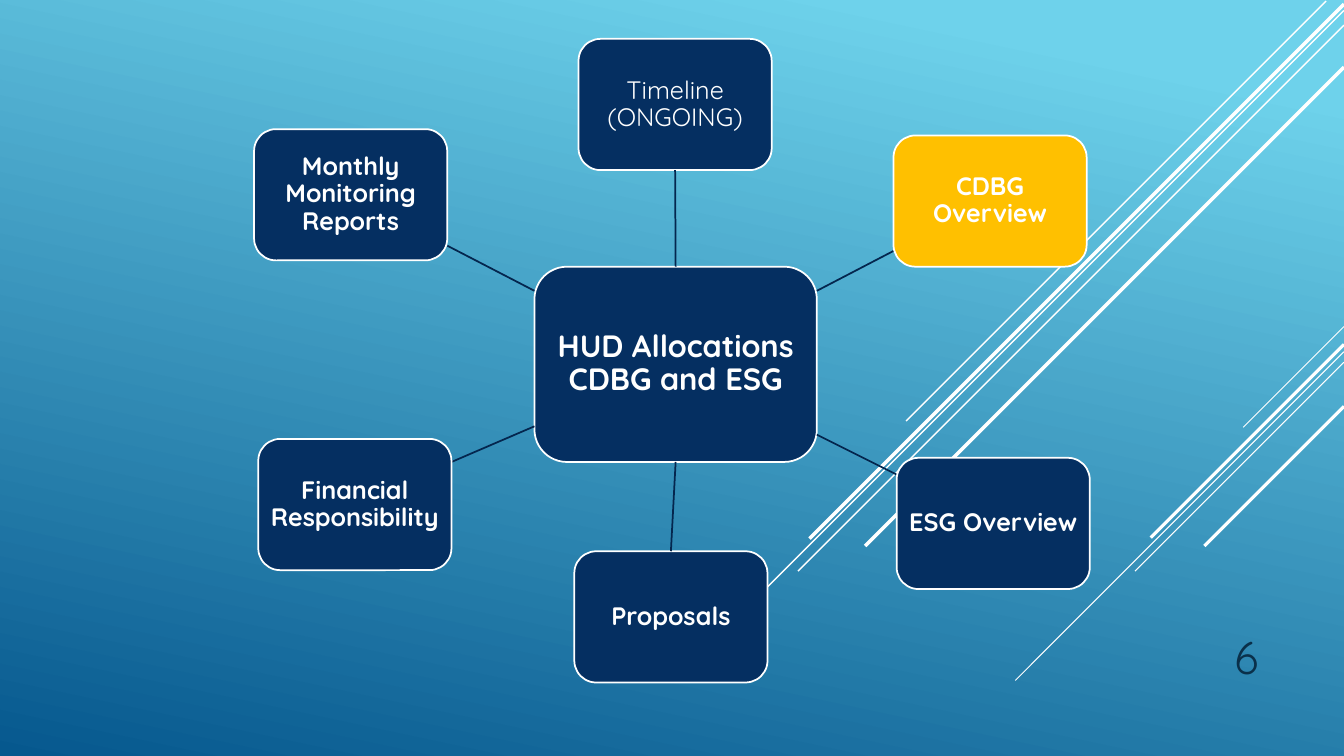
import pptx
import pptx.dml.color
import pptx.enum.shapes
import pptx.enum.text
import pptx.oxml.ns
import pptx.util
from lxml import etree

RGB = pptx.dml.color.RGBColor
ALIGN = pptx.enum.text.PP_ALIGN
ANCHOR = pptx.enum.text.MSO_ANCHOR

WHITE = RGB(0xFF, 0xFF, 0xFF)
NAVY = RGB(0x05, 0x2F, 0x61)
SPOKE_NAVY = RGB(0x04, 0x26, 0x4E)
NUMBER_NAVY = RGB(0x0A, 0x30, 0x4A)
GOLD = RGB(0xFF, 0xC0, 0x00)
SKY = RGB(0x6E, 0xD2, 0xEB)
DEEP_BLUE = RGB(0x06, 0x58, 0x8E)

EMU_PER_PX = 9525
TOP, LEFT, BOTTOM, RIGHT = range(4)

# Start x, start y, run, width in points; every streak falls at 45 degrees.
STREAKS = [
    (1280, 311, 96, 0.75),
    (1280, 335, 313, 0.75),
    (1280, 345, 199, 0.75),
    (1280, 328, 184, 2.25),
    (1280, 387, 133, 2.25),
    (1263, 1, 400, 1),
    (1280, 10, 638, 1),
    (1280, 24, 520, 1),
    (1280, 4, 509, 2.5),
    (1280, 64, 456, 2.5),
]

HUB_BOX = (509, 254, 269, 186)
TOPIC_SIZE = (184, 125)
# Left, top, label, fill, bold
SIDE_TOPICS = [
    (854, 436, "ESG Overview", NAVY),
    (242, 123, "Monthly Monitoring Reports", NAVY),
    (246, 418, "Financial Responsibility", NAVY),
    (851, 129, "CDBG Overview", GOLD),
]


def px(length):
    return pptx.util.Emu(round(length * EMU_PER_PX))


def centre(box):
    left, top, width, height = box
    return left + width / 2, top + height / 2


def spoke_ends(hub, topic):
    """Clip the centre-to-centre line at the facing vertical sides."""
    (hub_x, hub_y), (topic_x, topic_y) = centre(hub), centre(topic)
    slope = (topic_y - hub_y) / (topic_x - hub_x)
    if topic_x > hub_x:
        start_x, end_x = hub[0] + hub[2], topic[0]
    else:
        start_x, end_x = hub[0], topic[0] + topic[2]
    return [(x, round(hub_y + slope * (x - hub_x))) for x in (start_x, end_x)]


def write_text(frame, text, *, size, color=WHITE, bold=False, align=ALIGN.CENTER,
               anchor=ANCHOR.MIDDLE, inset=None, spacing=None):
    frame.word_wrap = True
    frame.vertical_anchor = anchor
    if inset is not None:
        frame.margin_left = frame.margin_right = px(inset)
        frame.margin_top = frame.margin_bottom = px(inset)
    paragraph = frame.paragraphs[0]
    paragraph.alignment = align
    paragraph.line_spacing = spacing
    run = paragraph.add_run()
    run.text = text
    run.font.name = "Quicksand"
    run.font.size = pptx.util.Pt(size)
    run.font.bold = bold
    run.font.color.rgb = color


class HubSlide:
    def __init__(self, presentation):
        self.slide = presentation.slides.add_slide(presentation.slide_layouts[6])
        self.shapes = self.slide.shapes

    def background(self):
        fill = self.slide.background.fill
        fill.gradient()
        fill.gradient_angle = 258
        for stop, position, color in zip(fill.gradient_stops, (0.1, 1), (SKY, DEEP_BLUE)):
            stop.position = position
            stop.color.rgb = color

    def line(self, start, end, color, width):
        connector = self.shapes.add_connector(
            pptx.enum.shapes.MSO_CONNECTOR.STRAIGHT, *map(px, (*start, *end)))
        connector.line.color.rgb = color
        connector.line.width = pptx.util.Pt(width)
        etree.SubElement(connector._element.spPr, pptx.oxml.ns.qn("a:effectLst"))
        return connector

    def spoke(self, start, end):
        return self.line(start, end, SPOKE_NAVY, 1.25)

    def box(self, place, label, fill=NAVY, size=18, bold=True, inset=5):
        card = self.shapes.add_shape(
            pptx.enum.shapes.MSO_SHAPE.ROUNDED_RECTANGLE, *map(px, place))
        card.shadow.inherit = False
        card.fill.solid()
        card.fill.fore_color.rgb = fill
        card.line.color.rgb = WHITE
        card.line.width = pptx.util.Pt(1.25)
        write_text(card.text_frame, label, size=size, bold=bold, inset=inset, spacing=0.9)
        return card

    def joined_spoke(self, hub, hub_side, topic, topic_side):
        spoke = self.spoke((0, 0), (0, 0))
        spoke.begin_connect(hub, hub_side)
        spoke.end_connect(topic, topic_side)

    def page_number(self, number):
        box = self.shapes.add_textbox(*map(px, (1088, 586, 120, 70)))
        write_text(box.text_frame, number, size=32, color=NUMBER_NAVY,
                   align=ALIGN.RIGHT, anchor=ANCHOR.BOTTOM)


def main():
    presentation = pptx.Presentation()
    presentation.slide_width, presentation.slide_height = px(1280), px(720)
    page = HubSlide(presentation)
    page.background()
    for x, y, run, width in STREAKS:
        page.line((x, y), (x - run, y + run), WHITE, width)
    page.page_number("6")

    hub = page.box(HUB_BOX, "HUD Allocations CDBG and ESG", size=22, inset=6)
    timeline = page.box((551, 37, *TOPIC_SIZE), "Timeline (ONGOING)", bold=False)
    page.joined_spoke(hub, TOP, timeline, BOTTOM)
    proposals = page.box((547, 525, *TOPIC_SIZE), "Proposals")
    page.joined_spoke(hub, BOTTOM, proposals, TOP)
    for left, top, label, fill in SIDE_TOPICS:
        place = (left, top, *TOPIC_SIZE)
        page.spoke(*spoke_ends(HUB_BOX, place))
        page.box(place, label, fill)

    presentation.save("out.pptx")


if __name__ == "__main__":
    main()
